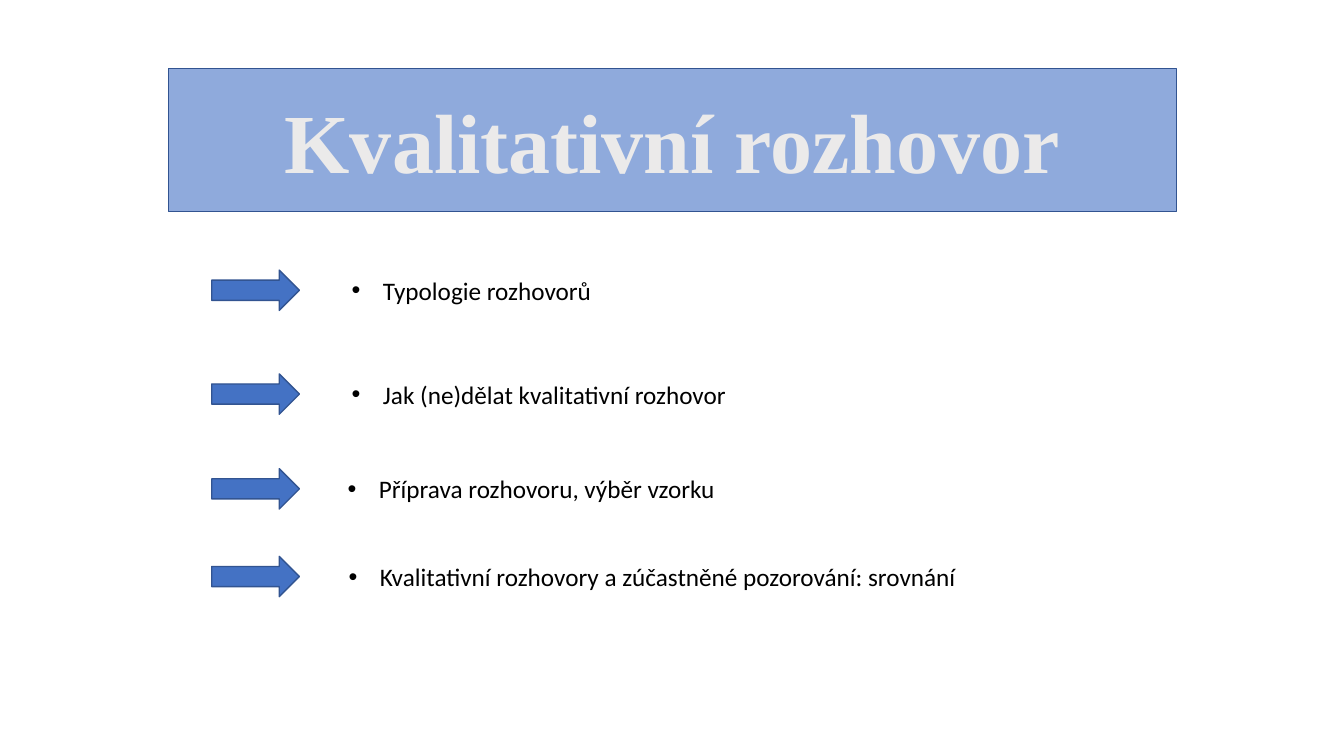
import pptx
import pptx.dml.color
import pptx.enum.shapes
import pptx.enum.text
import pptx.oxml
import pptx.oxml.ns
import pptx.util
from pptx.util import Inches


def colour(value):
    return pptx.dml.color.RGBColor.from_string(value)


class TopicSlide:
    BODY_FONT, TITLE_FONT = "Calibri", "Times New Roman"
    BANNER, ARROW, EDGE = "8FAADC", "4472C4", "325491"
    TITLE_TEXT, BODY_TEXT = "EBEAEA", "000000"

    def __init__(self, deck):
        self.slide = deck.slides.add_slide(deck.slide_layouts[5])

    def paint(self, shape, fill):
        shape.fill.solid()
        shape.fill.fore_color.rgb = colour(fill)
        shape.line.color.rgb = colour(self.EDGE)
        shape.line.width = pptx.util.Pt(1)

    def style(self, para, font, size, text_colour, bold=False):
        for span in para.runs:
            span.font.name = font
            span.font.size = pptx.util.Pt(size)
            span.font.bold = bold
            span.font.color.rgb = colour(text_colour)

    def title(self, text, left, top, width, height):
        banner = self.slide.shapes.title
        banner.left, banner.top = Inches(left), Inches(top)
        banner.width, banner.height = Inches(width), Inches(height)
        # Rounded outline for the title placeholder
        outline = pptx.oxml.parse_xml(
            f'<a:prstGeom {pptx.oxml.ns.nsdecls("a")} prst="roundRect"><a:avLst/></a:prstGeom>')
        banner.element.spPr.insert(1, outline)
        self.paint(banner, self.BANNER)
        frame = banner.text_frame
        frame.text = text
        frame.auto_size = pptx.enum.text.MSO_AUTO_SIZE.NONE
        frame.vertical_anchor = pptx.enum.text.MSO_ANCHOR.MIDDLE
        para = frame.paragraphs[0]
        para.alignment = pptx.enum.text.PP_ALIGN.CENTER
        self.style(para, self.TITLE_FONT, 60, self.TITLE_TEXT, bold=True)

    def arrow(self, left, top, width, height):
        arrow = self.slide.shapes.add_shape(
            pptx.enum.shapes.MSO_SHAPE.RIGHT_ARROW,
            Inches(left), Inches(top), Inches(width), Inches(height))
        arrow.shadow.inherit = False
        self.paint(arrow, self.ARROW)

    def bullet(self, text, left, top, width, height):
        box = self.slide.shapes.add_textbox(
            Inches(left), Inches(top), Inches(width), Inches(height))
        frame = box.text_frame
        frame.word_wrap = True
        frame.auto_size = pptx.enum.text.MSO_AUTO_SIZE.SHAPE_TO_FIT_TEXT
        frame.text = text
        para = frame.paragraphs[0]
        self.style(para, self.BODY_FONT, 18, self.BODY_TEXT)
        # Bullet with a hanging indent
        properties = para._p.get_or_add_pPr()
        properties.set("marL", str(Inches(0.31)))
        properties.set("indent", str(Inches(-0.31)))
        namespace = pptx.oxml.ns.nsdecls("a")
        properties.append(pptx.oxml.parse_xml(f'<a:buFont {namespace} typeface="Arial"/>'))
        properties.append(pptx.oxml.parse_xml(f'<a:buChar {namespace} char="•"/>'))


def main():
    deck = pptx.Presentation()
    deck.slide_width, deck.slide_height = Inches(13.33), Inches(7.5)
    page = TopicSlide(deck)

    # Title banner
    page.title("Kvalitativní rozhovor", 1.67, 0.68, 10, 1.42)

    # Topics: text, left, top, width
    topics = [
        ("Typologie rozhovorů", 3.39, 2.68, 5),
        ("Jak (ne)dělat kvalitativní rozhovor", 3.39, 3.71, 4.08),
        ("Příprava rozhovoru, výběr vzorku", 3.35, 4.65, 3.94),
        ("Kvalitativní rozhovory a zúčastněné pozorování: srovnání", 3.36, 5.52, 6.35),
    ]
    for text, left, top, width in topics:
        page.bullet(text, left, top, width, 0.4)
        page.arrow(2.1, top, 0.87, 0.4)

    deck.save("out.pptx")


if __name__ == "__main__":
    main()
